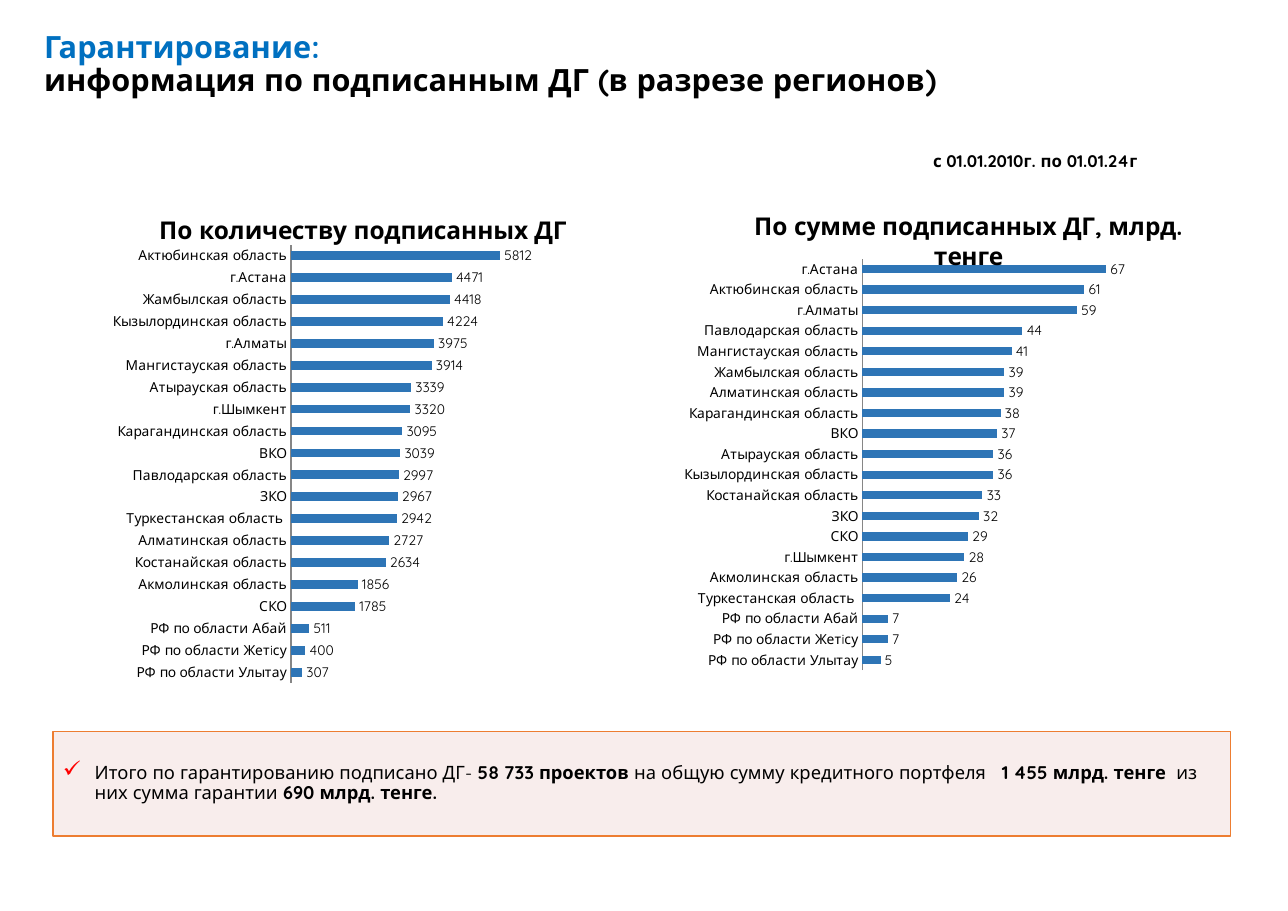
import dataclasses

import lxml.etree
import pptx
import pptx.chart.data
import pptx.dml.color
import pptx.enum.chart
import pptx.enum.shapes
import pptx.enum.text
import pptx.oxml
import pptx.oxml.ns
import pptx.util

Inches = pptx.util.Inches
Pt = pptx.util.Pt
qn = pptx.oxml.ns.qn


@dataclasses.dataclass(frozen=True)
class Theme:
    font: str = "Quicksand"
    text: str = "000000"
    accent: str = "0070C0"
    bar: str = "2E75B6"
    axis: str = "868686"
    panel: str = "F2DCDB"
    border: str = "ED7D31"
    check: str = "FF0000"
    title_size: float = 20
    chart_title_size: float = 16
    body_size: float = 12
    date_size: float = 11
    label_size: float = 9
    line_spacing: float = 0.9


def rgb(value):
    return pptx.dml.color.RGBColor.from_string(value)


def add_child(parent, tag, **attributes):
    return lxml.etree.SubElement(parent, qn(tag), attributes)


def make_layout(**values):
    """Build a manual chart layout; values are listed in schema order."""
    layout = pptx.oxml.parse_xml(
        '<c:layout xmlns:c="http://schemas.openxmlformats.org/drawingml/2006/chart"/>')
    manual = add_child(layout, "c:manualLayout")
    for name, value in values.items():
        add_child(manual, f"c:{name}", val=str(value))
    return layout


def remove_layout(element):
    for layout in element.findall(qn("c:layout")):
        element.remove(layout)


class SlideBuilder:
    def __init__(self, page, theme):
        self.page = page
        self.theme = theme

    def style_font(self, font, size, color=None, bold=False):
        font.name = self.theme.font
        font.size = Pt(size)
        font.bold = bold
        font.color.rgb = rgb(color or self.theme.text)

    def add_span(self, para, text, size, color=None, bold=False):
        span = para.add_run()
        span.text = text
        self.style_font(span.font, size, color, bold)

    def title(self, first_line, second_line, left, top, width, height):
        box = self.page.shapes.title
        box.left, box.top, box.width, box.height = map(Inches, (left, top, width, height))
        frame = box.text_frame
        frame.word_wrap = True
        frame.auto_size = pptx.enum.text.MSO_AUTO_SIZE.NONE
        frame.vertical_anchor = pptx.enum.text.MSO_ANCHOR.TOP
        para = frame.paragraphs[0]
        para.alignment = pptx.enum.text.PP_ALIGN.LEFT
        para.line_spacing = self.theme.line_spacing
        self.add_span(para, first_line, self.theme.title_size, self.theme.accent, True)
        para.add_line_break()
        self.add_span(para, second_line, self.theme.title_size, bold=True)

    def date(self, text, left, top, width, height):
        box = self.page.shapes.add_textbox(*map(Inches, (left, top, width, height)))
        box.text_frame.word_wrap = False
        self.add_span(box.text_frame.paragraphs[0], text, self.theme.date_size, bold=True)

    def summary(self, spans, left, top, width, height):
        """Add the check-marked panel; spans are (text, bold) pairs."""
        box = self.page.shapes.add_shape(
            pptx.enum.shapes.MSO_SHAPE.RECTANGLE, *map(Inches, (left, top, width, height)))
        box.shadow.inherit = False
        box.fill.solid()
        box.fill.fore_color.rgb = rgb(self.theme.panel)
        color = box.fill._xPr.find(qn("a:solidFill"))[0]
        add_child(color, "a:alpha", val="50000")
        box.line.color.rgb = rgb(self.theme.border)
        box.line.width = Pt(1)
        frame = box.text_frame
        frame.word_wrap = True
        frame.vertical_anchor = pptx.enum.text.MSO_ANCHOR.MIDDLE
        frame.margin_left = frame.margin_right = Inches(0.08)
        frame.margin_top = frame.margin_bottom = Inches(0.04)
        para = frame.paragraphs[0]
        para.alignment = pptx.enum.text.PP_ALIGN.LEFT
        para.line_spacing = self.theme.line_spacing
        para.space_after = Pt(6)
        self.add_check(para)
        for text, bold in spans:
            self.add_span(para, text, self.theme.body_size, bold=bold)

    def add_check(self, para):
        properties = para._p.get_or_add_pPr()
        properties.set("marL", str(Inches(0.3)))
        properties.set("indent", str(Inches(-0.29)))
        color = add_child(properties, "a:buClr")
        add_child(color, "a:srgbClr", val=self.theme.check)
        add_child(properties, "a:buSzPct", val="125000")
        add_child(properties, "a:buChar", char="✓")

    def bar_chart(self, title, title_at, regions, plot, number_format, maximum,
                  left, top, width, height):
        """Add a bar chart; regions run from the bottom bar to the top one."""
        data = pptx.chart.data.CategoryChartData()
        data.categories = [name for name, _ in regions]
        data.add_series("Series 1", [value for _, value in regions])
        chart = self.page.shapes.add_chart(
            pptx.enum.chart.XL_CHART_TYPE.BAR_CLUSTERED,
            *map(Inches, (left, top, width, height)), data).chart
        self.style_font(chart.font, self.theme.label_size)
        chart.has_legend = False

        chart.has_title = True
        para = chart.chart_title.text_frame.paragraphs[0]
        self.add_span(para, title, self.theme.chart_title_size, bold=True)
        heading = chart.chart_title._element
        remove_layout(heading)
        x, y = title_at
        heading.find(qn("c:tx")).addnext(make_layout(xMode="edge", yMode="edge", x=x, y=y))

        area = chart._chartSpace.find(f".//{qn('c:plotArea')}")
        remove_layout(area)
        x, y, w, h = plot
        area.insert(0, make_layout(
            layoutTarget="inner", xMode="edge", yMode="edge", x=x, y=y, w=w, h=h))

        names = chart.category_axis
        names.major_tick_mark = pptx.enum.chart.XL_TICK_MARK.NONE
        names.format.line.color.rgb = rgb(self.theme.axis)
        names.format.line.width = Pt(0.75)
        self.style_font(names.tick_labels.font, self.theme.label_size)
        values = chart.value_axis
        values.visible = False
        values.has_major_gridlines = False
        values.minimum_scale = 0
        values.maximum_scale = maximum

        bars = chart.plots[0]
        bars.gap_width = 150
        bars.vary_by_categories = False
        fill = bars.series[0].format.fill
        fill.solid()
        fill.fore_color.rgb = rgb(self.theme.bar)
        bars.has_data_labels = True
        labels = bars.data_labels
        labels.show_value = True
        labels.number_format = number_format
        labels.number_format_is_linked = False
        labels.position = pptx.enum.chart.XL_LABEL_POSITION.OUTSIDE_END
        self.style_font(labels.font, self.theme.label_size)


COUNTS = [
    ("РФ по области Улытау", 307), ("РФ по области Жетiсу", 400),
    ("РФ по области Абай", 511), ("СКО", 1785), ("Акмолинская область", 1856),
    ("Костанайская область", 2634), ("Алматинская область", 2727),
    ("Туркестанская область ", 2942), ("ЗКО", 2967), ("Павлодарская область", 2997),
    ("ВКО", 3039), ("Карагандинская область", 3095), ("г.Шымкент", 3320),
    ("Атырауская область", 3339), ("Мангистауская область", 3914), ("г.Алматы", 3975),
    ("Кызылординская область", 4224), ("Жамбылская область", 4418),
    ("г.Астана", 4471), ("Актюбинская область", 5812)]
SUMS = [
    ("РФ по области Улытау", 5), ("РФ по области Жетiсу", 7),
    ("РФ по области Абай", 7), ("Туркестанская область ", 24),
    ("Акмолинская область", 26), ("г.Шымкент", 28), ("СКО", 29), ("ЗКО", 32),
    ("Костанайская область", 33), ("Кызылординская область", 36),
    ("Атырауская область", 36), ("ВКО", 37), ("Карагандинская область", 38),
    ("Алматинская область", 39), ("Жамбылская область", 39),
    ("Мангистауская область", 41), ("Павлодарская область", 44), ("г.Алматы", 59),
    ("Актюбинская область", 61), ("г.Астана", 67)]


def main():
    deck = pptx.Presentation()
    deck.slide_width, deck.slide_height = Inches(11.69), Inches(8.27)
    title_only = deck.slide_layouts[5]
    builder = SlideBuilder(deck.slides.add_slide(title_only), Theme())
    builder.title("Гарантирование:", "информация по подписанным ДГ (в разрезе регионов)",
                  0.3, 0.24, 8.39, 0.77)
    builder.date("с 01.01.2010г. по 01.01.24г", 8.37, 1.32, 2.17, 0.29)
    builder.summary([
        ("Итого по гарантированию подписано ДГ- ", False), ("58 733 проектов ", True),
        ("на общую сумму кредитного портфеля  ", False), (" 1 455 млрд. тенге  ", True),
        ("из них сумма гарантии", False), (" 690 млрд. тенге.", True),
    ], 0.48, 6.64, 10.69, 0.95)
    builder.bar_chart("По количеству подписанных ДГ", (0.11, 0.04), COUNTS,
                      (0.37, 0.11, 0.48, 0.84), "General", 7000, 0.88, 1.7, 4.76, 4.74)
    builder.bar_chart("По сумме подписанных ДГ, млрд. тенге", (0.19, 0.01), SUMS,
                      (0.38, 0.12, 0.49, 0.83), "#,##0", 80, 5.78, 1.81, 5.39, 4.5)
    deck.save("out.pptx")


if __name__ == "__main__":
    main()
